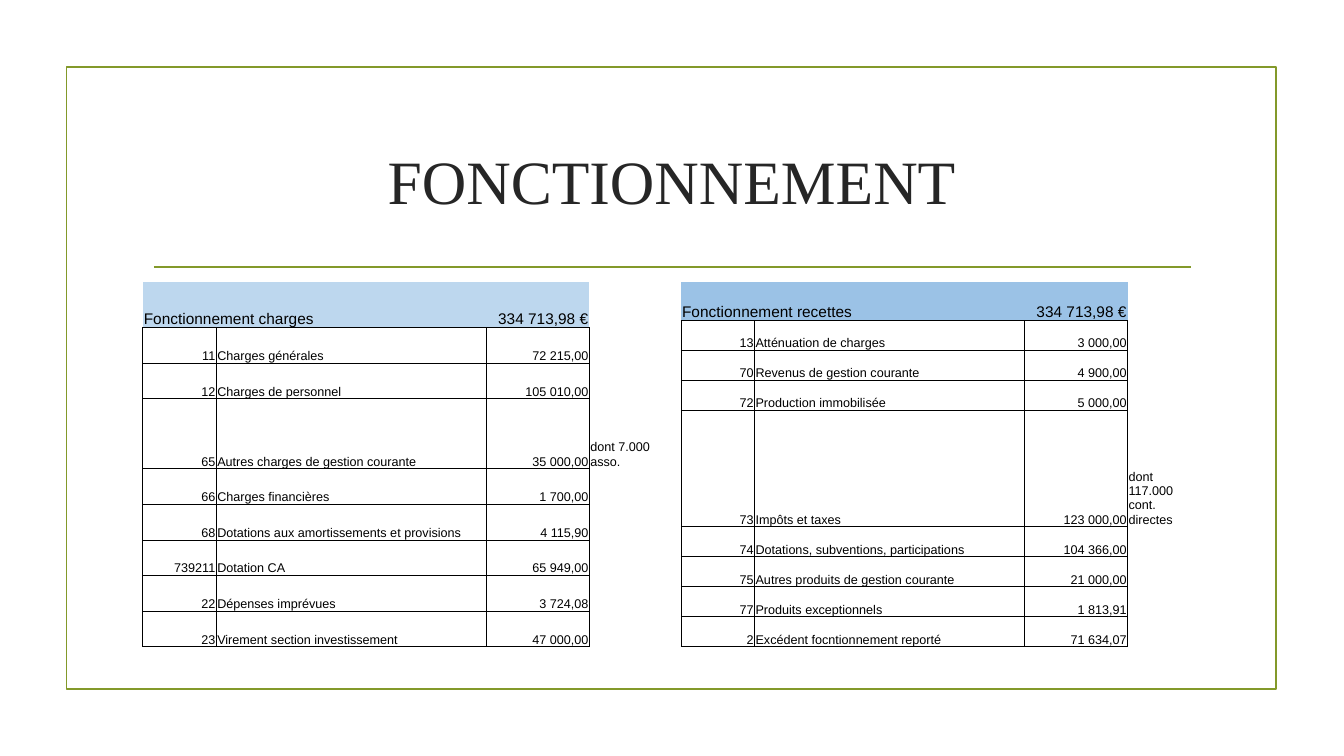
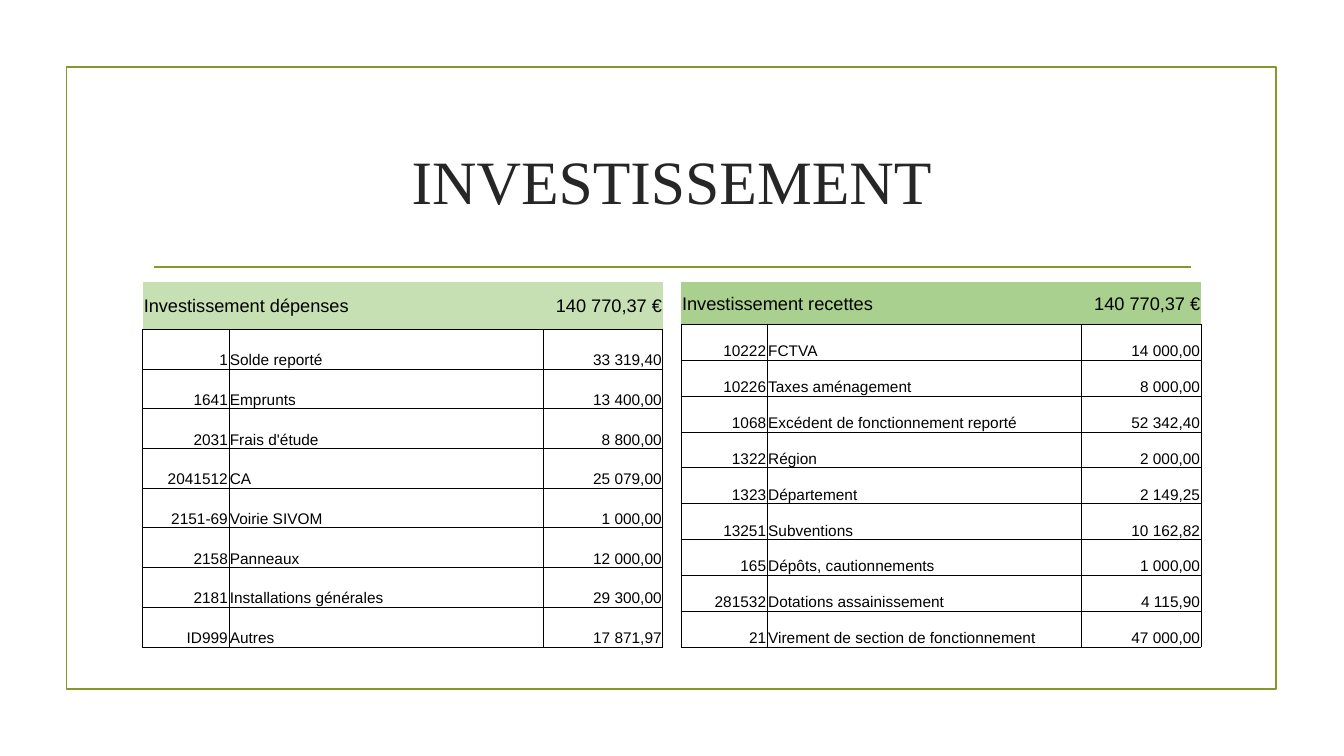
from dataclasses import dataclass

from lxml import etree
from pptx import Presentation
from pptx.dml.color import RGBColor
from pptx.enum.shapes import MSO_CONNECTOR, MSO_SHAPE
from pptx.enum.text import MSO_ANCHOR, PP_ALIGN
from pptx.oxml.ns import qn
from pptx.util import Pt

LEFT, CENTER, RIGHT = PP_ALIGN.LEFT, PP_ALIGN.CENTER, PP_ALIGN.RIGHT
MIDDLE, BOTTOM = MSO_ANCHOR.MIDDLE, MSO_ANCHOR.BOTTOM
RECTANGLE, STRAIGHT = MSO_SHAPE.RECTANGLE, MSO_CONNECTOR.STRAIGHT

OLIVE, INK, BLACK = "83992A", "262626", "000000"
TITLE_FONT, TABLE_FONT = "Times New Roman", "Arial"
PLAIN_TABLE_STYLE = "{2D5ABB26-0587-4C30-8999-92F81FD0307C}"
TITLE_ONLY_LAYOUT = 5

TITLE_BOX = (102, 77, 756, 103)
TABLE_TOP, TABLE_WIDTH, TABLE_HEIGHT = 201.5, 371.5, 260.6
TABLE_LEFTS = (102, 486.5)
NOTE_COLUMN = 3


@dataclass
class TableStyle:
    column_widths: tuple
    header_size: float
    body_size: float
    header_anchor: MSO_ANCHOR


@dataclass
class Budget:
    """One side of the accounts; notes maps a row index to (text, row height)."""
    heading: str
    total: str
    fill: str
    header_height: float
    lines: list
    notes: dict


OPERATING_STYLE = TableStyle((52.5, 193, 73.5, 52.5), 11, 9, BOTTOM)
INVESTMENT_STYLE = TableStyle((61.5, 224.5, 85.5), 13, 11, MIDDLE)

OPERATING = [
    Budget("Fonctionnement charges", "334 713,98 €", "BDD7EE", 32.5, [
        ("11", "Charges générales", "72 215,00"),
        ("12", "Charges de personnel", "105 010,00"),
        ("65", "Autres charges de gestion courante", "35 000,00"),
        ("66", "Charges financières", "1 700,00"),
        ("68", "Dotations aux amortissements et provisions", "4 115,90"),
        ("739211", "Dotation CA", "65 949,00"),
        ("22", "Dépenses imprévues", "3 724,08"),
        ("23", "Virement section investissement", "47 000,00"),
    ], {3: ("dont 7.000 asso.", 50)}),
    Budget("Fonctionnement recettes", "334 713,98 €", "9BC2E6", 27.5, [
        ("13", "Atténuation de charges", "3 000,00"),
        ("70", "Revenus de gestion courante", "4 900,00"),
        ("72", "Production immobilisée", "5 000,00"),
        ("73", "Impôts et taxes", "123 000,00"),
        ("74", "Dotations, subventions, participations", "104 366,00"),
        ("75", "Autres produits de gestion courante", "21 000,00"),
        ("77", "Produits exceptionnels", "1 813,91"),
        ("2", "Excédent focntionnement reporté", "71 634,07"),
    ], {4: ("dont 117.000 cont. directes", 83)}),
]

INVESTMENT = [
    Budget("Investissement dépenses", "140 770,37 €", "C6E0B4", 33.8, [
        ("1", "Solde reporté", "33 319,40"),
        ("1641", "Emprunts", "13 400,00"),
        ("2031", "Frais d'étude", "8 800,00"),
        ("2041512", "CA", "25 079,00"),
        ("2151-69", "Voirie SIVOM", "1 000,00"),
        ("2158", "Panneaux", "12 000,00"),
        ("2181", "Installations générales", "29 300,00"),
        ("ID999", "Autres", "17 871,97"),
    ], {}),
    Budget("Investissement recettes", "140 770,37 €", "A9D08E", 30.2, [
        ("10222", "FCTVA", "14 000,00"),
        ("10226", "Taxes aménagement", "8 000,00"),
        ("1068", "Excédent de fonctionnement reporté", "52 342,40"),
        ("1322", "Région", "2 000,00"),
        ("1323", "Département", "2 149,25"),
        ("13251", "Subventions", "10 162,82"),
        ("165", "Dépôts, cautionnements", "1 000,00"),
        ("281532", "Dotations assainissement", "4 115,90"),
        ("21", "Virement de section de fonctionnement", "47 000,00"),
    ], {}),
]


def rgb(color):
    return RGBColor.from_string(color)


def points(*lengths):
    return [Pt(length) for length in lengths]


def set_font(paragraph, name, size, color):
    paragraph.font.name = name
    paragraph.font.size = Pt(size)
    paragraph.font.color.rgb = rgb(color)


def add_frame(slide):
    frame = slide.shapes.add_shape(RECTANGLE, *points(47.5, 48, 864, 444))
    frame.shadow.inherit = False
    frame.fill.background()
    rule = slide.shapes.add_connector(STRAIGHT, *points(110, 190.8, 850.5, 190.8))
    etree.SubElement(rule.element.spPr, qn("a:effectLst"))
    for shape in (frame, rule):
        shape.line.color.rgb = rgb(OLIVE)
        shape.line.width = Pt(1.25)


def set_title(slide, text):
    title = slide.shapes.title
    title.left, title.top, title.width, title.height = points(*TITLE_BOX)
    title.text_frame.text = text
    title.text_frame.vertical_anchor = MIDDLE
    paragraph = title.text_frame.paragraphs[0]
    paragraph.alignment = CENTER
    set_font(paragraph, TITLE_FONT, 44, INK)


def set_borders(cell, sides):
    """Draw thin black lines on the sides named by letters, in the order L, R, T, B."""
    properties = cell._tc.get_or_add_tcPr()
    for side in sides:
        line = etree.SubElement(properties, qn(f"a:ln{side}"), w=str(Pt(0.5)))
        fill = etree.SubElement(line, qn("a:solidFill"))
        etree.SubElement(fill, qn("a:srgbClr"), val=BLACK)


def fill_cell(cell, text, size, alignment, anchor, borders, fill=None):
    cell.text = text
    cell.vertical_anchor = anchor
    cell.margin_left = cell.margin_right = cell.margin_top = Pt(0.72)
    cell.margin_bottom = 0
    paragraph = cell.text_frame.paragraphs[0]
    paragraph.alignment = alignment
    set_font(paragraph, TABLE_FONT, size, BLACK)
    set_borders(cell, borders)
    if fill:
        cell.fill.solid()
        cell.fill.fore_color.rgb = rgb(fill)
    else:
        cell.fill.background()


def row_heights(budget, height):
    """Share what the header and the noted rows leave equally among the other rows."""
    fixed = {0: budget.header_height}
    fixed.update({row: note[1] for row, note in budget.notes.items()})
    count = len(budget.lines) + 1
    shared = (height - sum(fixed.values())) / (count - len(fixed))
    return [fixed.get(row, shared) for row in range(count)]


def add_budget_table(slide, budget, style, left, top, width, height):
    heights = row_heights(budget, height)
    frame = slide.shapes.add_table(len(heights), len(style.column_widths),
                                   *points(left, top, width, height))
    frame.element.find(".//" + qn("a:tableStyleId")).text = PLAIN_TABLE_STYLE
    table = frame.table
    table.first_row = table.horz_banding = False
    for column, column_width in zip(table.columns, style.column_widths):
        column.width = Pt(column_width)
    for row, row_height in zip(table.rows, heights):
        row.height = Pt(row_height)

    header = ((budget.heading, LEFT), ("", LEFT), (budget.total, RIGHT))
    for column, (text, alignment) in enumerate(header):
        fill_cell(table.cell(0, column), text, style.header_size, alignment,
                  style.header_anchor, "B", budget.fill)
    table.cell(0, 0).merge(table.cell(0, 1))

    for row, line in enumerate(budget.lines, start=1):
        for column, (text, alignment) in enumerate(zip(line, (RIGHT, LEFT, RIGHT))):
            fill_cell(table.cell(row, column), text, style.body_size, alignment,
                      BOTTOM, "LRTB")
    if len(style.column_widths) > NOTE_COLUMN:
        for row in range(len(heights)):
            note = budget.notes.get(row, ("",))[0]
            fill_cell(table.cell(row, NOTE_COLUMN), note, style.body_size, LEFT,
                      BOTTOM, "L" if row else "")


def add_budget_slide(presentation, title, budgets, style):
    slide = presentation.slides.add_slide(presentation.slide_layouts[TITLE_ONLY_LAYOUT])
    add_frame(slide)
    set_title(slide, title)
    for budget, left in zip(budgets, TABLE_LEFTS):
        add_budget_table(slide, budget, style, left, TABLE_TOP, TABLE_WIDTH, TABLE_HEIGHT)


def main():
    presentation = Presentation()
    presentation.slide_width, presentation.slide_height = points(960, 540)
    add_budget_slide(presentation, "FONCTIONNEMENT", OPERATING, OPERATING_STYLE)
    add_budget_slide(presentation, "INVESTISSEMENT", INVESTMENT, INVESTMENT_STYLE)
    presentation.save("out.pptx")


if __name__ == "__main__":
    main()
